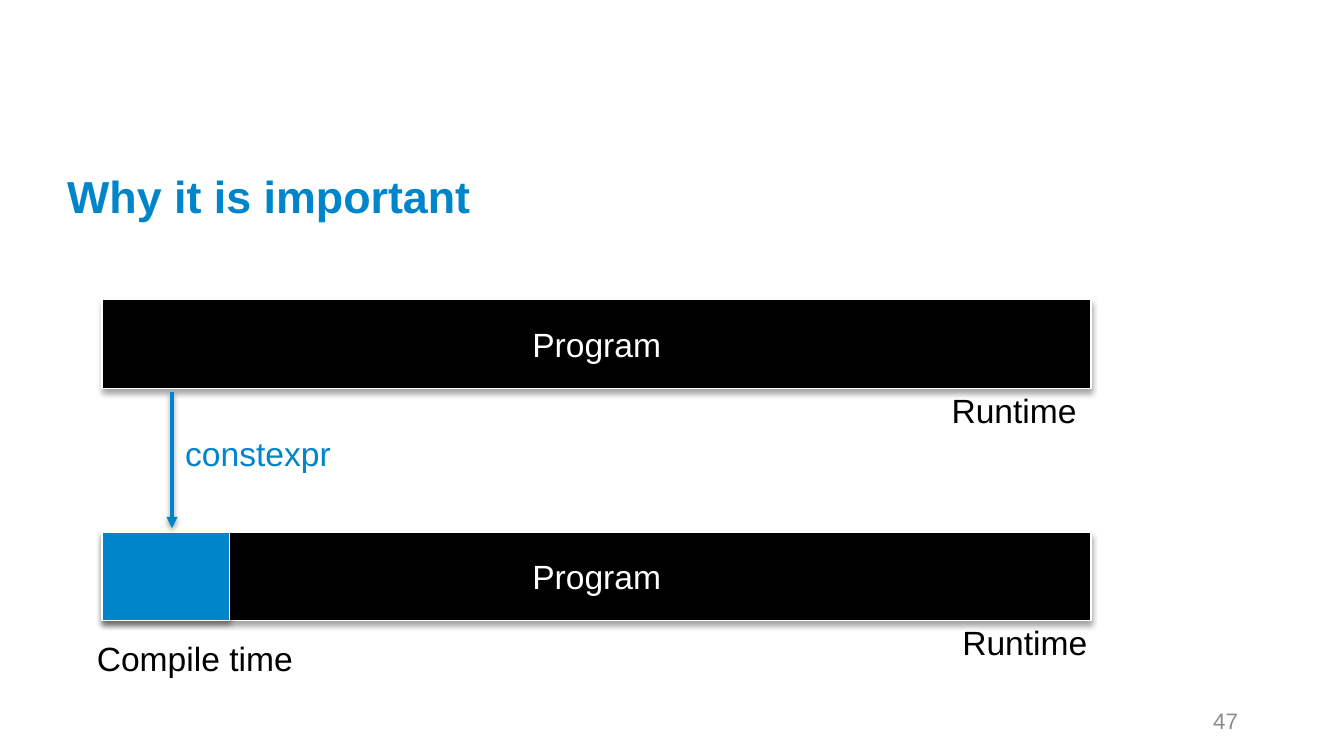
from lxml.etree import SubElement
from pptx import Presentation
from pptx.dml.color import RGBColor
from pptx.enum.shapes import MSO_CONNECTOR, MSO_SHAPE
from pptx.enum.text import MSO_ANCHOR, PP_ALIGN
from pptx.oxml.ns import qn
from pptx.util import Inches, Pt

BLUE = RGBColor(0x00, 0x85, 0xCA)
BLACK = RGBColor(0x00, 0x00, 0x00)
WHITE = RGBColor(0xFF, 0xFF, 0xFF)
GRAY = RGBColor(0x8C, 0x8C, 0x8C)


def add_run(p, text, size, color, bold=False):
    r = p.add_run()
    r.text = text
    r.font.name = "Arial"
    r.font.size = Pt(size)
    r.font.bold = bold
    r.font.color.rgb = color


def add_shadow(shape, dist, alpha):
    """Soft shadow below the shape; call after its line is set."""
    effects = SubElement(shape._element.spPr, qn("a:effectLst"))
    shadow = SubElement(effects, qn("a:outerShdw"), blurRad=str(Pt(3.1)),
                        dist=str(Pt(dist)), dir="5400000", rotWithShape="0")
    color = SubElement(shadow, qn("a:srgbClr"), val=str(BLACK))
    SubElement(color, qn("a:alpha"), val=str(alpha * 1000))


# 16:9 slide
prs = Presentation()
prs.slide_width = Inches(10)
prs.slide_height = Inches(10) * 9 // 16
s = prs.slides.add_slide(prs.slide_layouts[5])

# Title
title = s.shapes.title
title.left, title.top = Inches(0.5), Inches(1.22)
title.width, title.height = Inches(9), Inches(0.42)
tf = title.text_frame
tf.margin_left = tf.margin_right = tf.margin_bottom = 0
tf.margin_top = Inches(0.05)
tf.vertical_anchor = MSO_ANCHOR.MIDDLE
p = tf.paragraphs[0]
p.alignment = PP_ALIGN.LEFT
add_run(p, "Why it is important", 24, BLUE, bold=True)

# Program bars, the second with its compile-time part
for top, width, fill, text in [
    (2.23, 7.36, BLACK, "Program"),
    (3.96, 7.36, BLACK, "Program"),
    (3.96, 0.95, BLUE, ""),
]:
    bar = s.shapes.add_shape(MSO_SHAPE.RECTANGLE, Inches(0.76), Inches(top),
                             Inches(width), Inches(0.66))
    bar.fill.solid()
    bar.fill.fore_color.rgb = fill
    bar.line.color.rgb = WHITE
    bar.line.width = Pt(0.75)
    add_shadow(bar, 1.8, 35)
    if text:
        tf = bar.text_frame
        tf.vertical_anchor = MSO_ANCHOR.MIDDLE
        p = tf.paragraphs[0]
        p.alignment = PP_ALIGN.CENTER
        add_run(p, text, 18, WHITE)

# Time labels under the bars
for text, left, top, width in [
    ("Runtime", 7.08, 2.9, 1.11),
    ("Runtime", 7.16, 4.63, 1.11),
    ("Compile time", 0.72, 4.75, 1.51),
]:
    label = s.shapes.add_textbox(Inches(left), Inches(top),
                                 Inches(width), Inches(0.33))
    tf = label.text_frame
    tf.word_wrap = True
    tf.margin_left = tf.margin_right = tf.margin_top = tf.margin_bottom = 0
    add_run(tf.paragraphs[0], text, 18, BLACK)

# Arrow from the program to its compile-time part
arrow = s.shapes.add_connector(MSO_CONNECTOR.STRAIGHT, Inches(1.28), Inches(2.92),
                               Inches(1.28), Inches(3.93))
arrow.line.color.rgb = BLUE
arrow.line.width = Pt(2)
SubElement(arrow.line._get_or_add_ln(), qn("a:tailEnd"), type="triangle")
add_shadow(arrow, 1.6, 38)

keyword = s.shapes.add_textbox(Inches(1.28), Inches(3.17), Inches(1.3), Inches(0.4))
keyword.text_frame.word_wrap = False
add_run(keyword.text_frame.paragraphs[0], "constexpr", 18, BLUE)

# Slide number
number = s.shapes.add_textbox(Inches(7.06), Inches(5.21), Inches(2.25), Inches(0.3))
tf = number.text_frame
tf.word_wrap = True
tf.vertical_anchor = MSO_ANCHOR.MIDDLE
p = tf.paragraphs[0]
p.alignment = PP_ALIGN.RIGHT
add_run(p, "47", 12, GRAY)

prs.save("out.pptx")
